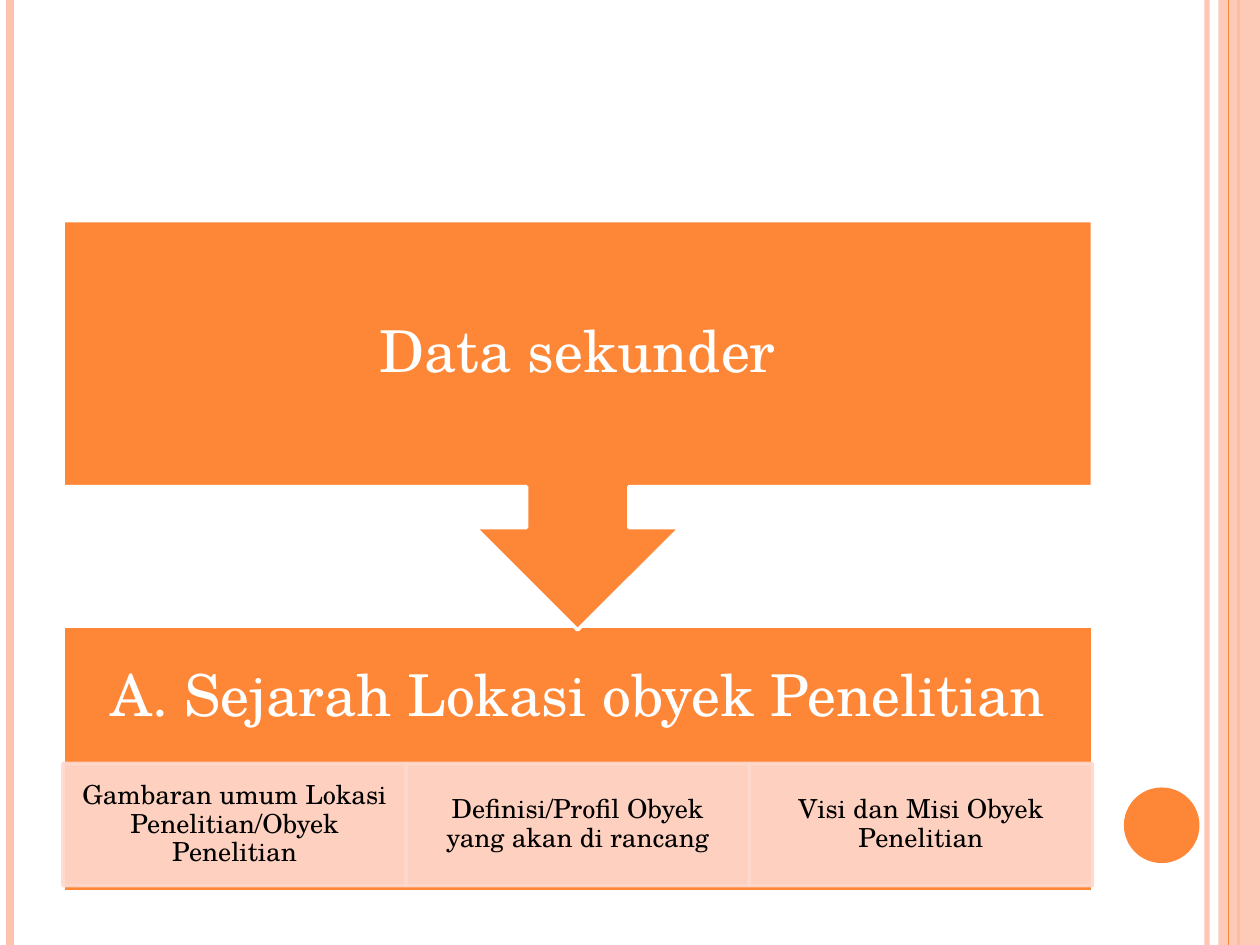
from lxml import etree
from pptx import Presentation
from pptx.dml.color import RGBColor
from pptx.enum import shapes, text
from pptx.oxml.ns import qn
from pptx.util import Inches, Pt

FONT = "TeX Gyre Schola"
ORANGE, PEACH, PALE = "FE8637", "FEC3AE", "FFD9CE"
WHITE, BLACK = "FFFFFF", "000000"
LEFT, WIDTH = 0.5, 8.17


def set_color(color_format, color, opacity=100):
    color_format.rgb = RGBColor.from_string(color)
    if opacity < 100:
        element = color_format._xFill.find(qn("a:srgbClr"))
        etree.SubElement(element, qn("a:alpha"), val=str(opacity * 1000))


def add_rule(slide, x, color, width, opacity=100):
    """Draw a vertical line over the full slide height."""
    line = slide.shapes.add_connector(
        shapes.MSO_CONNECTOR.STRAIGHT, Inches(x), 0, Inches(x), Inches(7.5))
    line.line.width = Pt(width)
    line.line.fill.solid()
    set_color(line.line.fill.fore_color, color, opacity)
    etree.SubElement(line._element.spPr, qn("a:effectLst"))


def add_panel(slide, kind, box, fill, opacity=100, line=None):
    shape = slide.shapes.add_shape(kind, *map(Inches, box))
    shape.shadow.inherit = False
    shape.fill.solid()
    set_color(shape.fill.fore_color, fill, opacity)
    if line:
        shape.line.width = Pt(2)
        shape.line.fill.solid()
        set_color(shape.line.fill.fore_color, line, opacity)
    else:
        shape.line.fill.background()
    return shape


def add_label(slide, box, words, size, color, inset_x, inset_y):
    frame = slide.shapes.add_textbox(*map(Inches, box)).text_frame
    frame.word_wrap = True
    frame.vertical_anchor = text.MSO_ANCHOR.MIDDLE
    frame.margin_left = frame.margin_right = Inches(inset_x)
    frame.margin_top = frame.margin_bottom = Inches(inset_y)
    paragraph = frame.paragraphs[0]
    paragraph.alignment = text.PP_ALIGN.CENTER
    paragraph.line_spacing = 0.9
    run = paragraph.add_run()
    run.text = words
    run.font.name = FONT
    run.font.size = Pt(size)
    run.font.color.rgb = RGBColor.from_string(color)


def add_heading(slide, box, words):
    add_label(slide, box, words, 33, WHITE, 0.26, 0.26)


def add_detail(slide, box, words):
    add_panel(slide, shapes.MSO_SHAPE.RECTANGLE, box, PALE, 90, PALE)
    add_label(slide, box, words, 15, BLACK, 0.12, 0.02)


def add_frame(slide):
    rectangle, oval = shapes.MSO_SHAPE.RECTANGLE, shapes.MSO_SHAPE.OVAL
    add_rule(slide, 9.58, PEACH, 3, 93)
    add_rule(slide, 0.08, PEACH, 4.5)
    add_rule(slide, 9.83, ORANGE, 1.5)
    add_panel(slide, rectangle, (9.67, 0, 0.33, 7.5), PEACH, 87)
    add_rule(slide, 9.75, ORANGE, 0.75)
    add_panel(slide, oval, (8.92, 6.25, 0.6, 0.6), ORANGE)


def main():
    presentation = Presentation()
    presentation.slide_width, presentation.slide_height = Inches(10), Inches(7.5)
    slide = presentation.slides.add_slide(presentation.slide_layouts[6])

    # Side stripes and page dot
    add_frame(slide)

    # Lower block with its three details
    add_panel(slide, shapes.MSO_SHAPE.RECTANGLE, (LEFT, 4.97, WIDTH, 2.11),
              ORANGE, line=WHITE)
    add_heading(slide, (LEFT, 4.97, WIDTH, 1.14),
                "A. Sejarah Lokasi obyek Penelitian")
    details = ["Gambaran umum Lokasi Penelitian/Obyek Penelitian",
               "Definisi/Profil Obyek yang akan di rancang",
               "Visi dan Misi Obyek Penelitian"]
    column = WIDTH / len(details)
    for index, words in enumerate(details):
        add_detail(slide, (LEFT + index * column, 6.06, column, 0.97), words)

    # Upper block pointing down
    callout = add_panel(slide, shapes.MSO_SHAPE.UP_ARROW_CALLOUT,
                        (LEFT, 1.75, WIDTH, 3.25), ORANGE, line=WHITE)
    callout.rotation = 180
    add_heading(slide, (LEFT, 1.75, WIDTH, 2.11), "Data sekunder")

    presentation.save("out.pptx")


if __name__ == "__main__":
    main()
